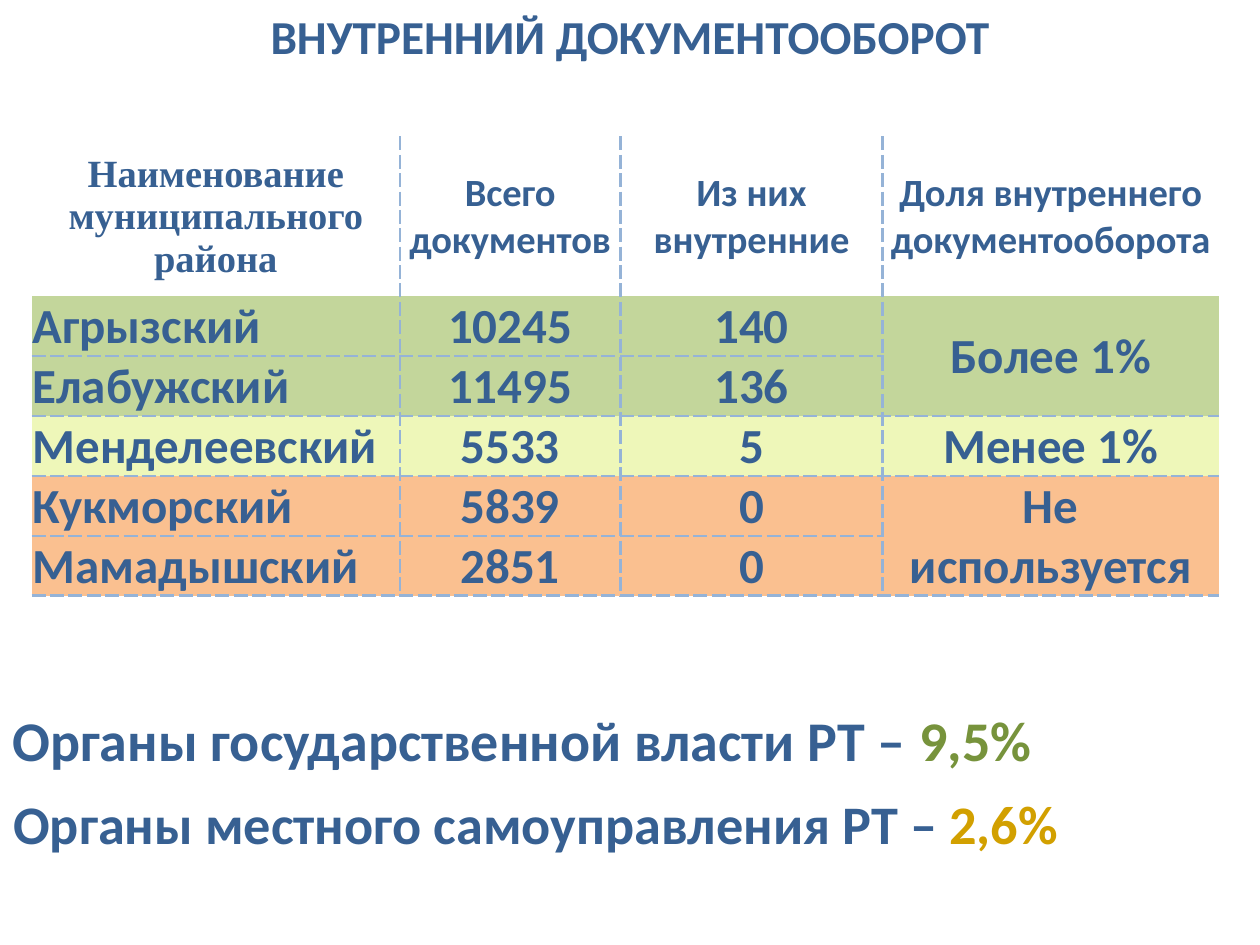
from lxml.etree import SubElement
from pptx import Presentation
from pptx.dml.color import RGBColor
from pptx.enum.text import MSO_ANCHOR as Anchor, MSO_AUTO_SIZE as AutoSize, PP_ALIGN as Align
from pptx.oxml.ns import qn
from pptx.util import Cm, Pt

BLUE = RGBColor(0x37, 0x60, 0x92)
BORDER = RGBColor(0x95, 0xB3, 0xD7)
WHITE = RGBColor(0xFF, 0xFF, 0xFF)
GREEN = RGBColor(0xC3, 0xD6, 0x9B)
YELLOW = RGBColor(0xEE, 0xF7, 0xB9)
ORANGE = RGBColor(0xFA, 0xC0, 0x90)
DARK_GREEN = RGBColor(0x77, 0x93, 0x3C)
GOLD = RGBColor(0xD2, 0xA0, 0x00)

HEADERS = ["Наименование муниципального района", "Всего документов",
           "Из них внутренние", "Доля внутреннего документооборота"]
GROUPS = [
    ("Более 1%", GREEN, [("Агрызский", "10245", "140"), ("Елабужский", "11495", "136")]),
    ("Менее 1%", YELLOW, [("Менделеевский", "5533", "5")]),
    ("Не используется", ORANGE, [("Кукморский", "5839", "0"), ("Мамадышский", "2851", "0")]),
]
COL_WIDTHS = [7.42, 4.45, 5.28, 6.78]
HEADER_HEIGHT, ROW_HEIGHT = 3.22, 1.04


class Deck:
    """Holds the text style and the current slide."""

    def __init__(self, font="Calibri", color=BLUE):
        self.font, self.color = font, color
        self.prs = Presentation()
        self.prs.slide_width, self.prs.slide_height = Cm(25.4), Cm(19.05)
        self.s = self.prs.slides.add_slide(self.prs.slide_layouts[5])

    def style(self, p, size, align=Align.LEFT, font=None):
        p.alignment = align
        p.font.name, p.font.size, p.font.bold = font or self.font, Pt(size), True
        p.font.color.rgb = self.color

    def title(self, text, width, height, size):
        sp = self.s.shapes.title
        sp.left, sp.top, sp.width, sp.height = 0, 0, Cm(width), Cm(height)
        tf = sp.text_frame
        tf.text = text
        tf.auto_size = AutoSize.SHAPE_TO_FIT_TEXT
        self.style(tf.paragraphs[0], size, Align.CENTER)

    def summary(self, left, top, width, height, label, value, color, size):
        tf = self.s.shapes.add_textbox(Cm(left), Cm(top), Cm(width), Cm(height)).text_frame
        tf.word_wrap, tf.auto_size = True, AutoSize.SHAPE_TO_FIT_TEXT
        p = tf.paragraphs[0]
        p.add_run().text = label
        r = p.add_run()
        r.text = value
        self.style(p, size)
        r.font.color.rgb = color

    def borders(self, cell, sides):
        tcPr = cell._tc.get_or_add_tcPr()
        for side in "LRTB":
            ln = SubElement(tcPr, qn(f"a:ln{side}"), w=str(Pt(1.5)))
            if side in sides:
                fill = SubElement(ln, qn("a:solidFill"))
                SubElement(fill, qn("a:srgbClr"), val=str(BORDER))
                SubElement(ln, qn("a:prstDash"), val="sysDash")
            else:
                SubElement(ln, qn("a:noFill"))

    def cell(self, cell, text, fill, sides, size, align=Align.CENTER,
             anchor=Anchor.MIDDLE, font=None):
        cell.margin_left = cell.margin_right = cell.margin_top = Cm(0.02)
        cell.margin_bottom = 0
        cell.vertical_anchor = anchor
        self.borders(cell, sides)
        cell.fill.solid()
        cell.fill.fore_color.rgb = fill
        if text:
            cell.text = text
            self.style(cell.text_frame.paragraphs[0], size, align, font)

    def table(self, left, top, headers, groups):
        count = sum(len(rows) for _, _, rows in groups)
        table = self.s.shapes.add_table(
            count + 1, len(headers), Cm(left), Cm(top), Cm(sum(COL_WIDTHS)),
            Cm(HEADER_HEIGHT + count * ROW_HEIGHT)).table
        for column, width in zip(table.columns, COL_WIDTHS):
            column.width = Cm(width)
        for i, row in enumerate(table.rows):
            row.height = Cm(ROW_HEIGHT if i else HEADER_HEIGHT)
        last = len(headers) - 1
        sides = ["R"] + ["LR"] * (last - 1) + ["L"]
        for j, text in enumerate(headers):
            self.cell(table.cell(0, j), text, WHITE, sides[j], 22,
                      font=None if j else "Times New Roman")
        i = 1
        for share, fill, rows in groups:
            if len(rows) > 1:
                table.cell(i, last).merge(table.cell(i + len(rows) - 1, last))
            for k, values in enumerate(rows):
                for j, text in enumerate((*values, "" if k else share)):
                    top_side = "T" if i > 1 and not (k and j == last) else ""
                    self.cell(table.cell(i, j), text, fill, sides[j] + top_side + "B", 28,
                              Align.CENTER if j else Align.LEFT,
                              Anchor.MIDDLE if j else Anchor.BOTTOM)
                i += 1


def main():
    deck = Deck()
    deck.title("ВНУТРЕННИЙ ДОКУМЕНТООБОРОТ", 25.4, 1.42, 27)
    deck.table(0.64, 2.75, HEADERS, GROUPS)
    deck.summary(0.02, 15.8, 22, 1.57, "Органы местного самоуправления РТ – ", "2,6%", GOLD, 31)
    deck.summary(0, 14.1, 21.18, 1.62, "Органы государственной власти РТ – ", "9,5%", DARK_GREEN, 32)
    deck.prs.save("out.pptx")


if __name__ == "__main__":
    main()
